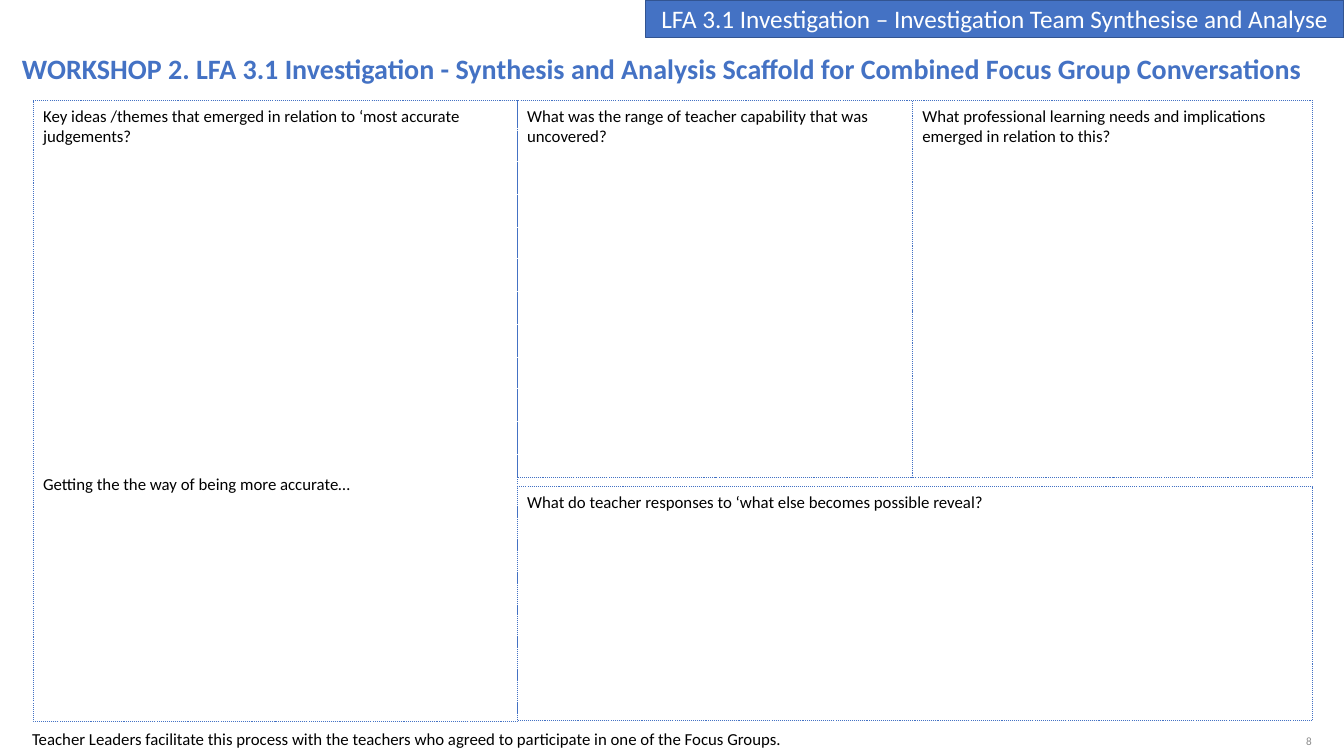
from dataclasses import dataclass

from pptx import Presentation
from pptx.dml.color import RGBColor
from pptx.enum.dml import MSO_LINE
from pptx.enum.shapes import MSO_SHAPE
from pptx.enum.text import MSO_ANCHOR, MSO_AUTO_SIZE, PP_ALIGN
from pptx.util import Pt

# Content
TITLE = ("WORKSHOP 2. LFA 3.1 Investigation - Synthesis and Analysis "
         "Scaffold for Combined Focus Group Conversations")
BANNER = "LFA 3.1 Investigation – Investigation Team Synthesise and Analyse"
THEMES = ["Key ideas /themes that emerged in relation to ‘most accurate judgements?",
          "Getting the the way of being more accurate…"]
RANGE = ["What was the range of teacher capability that was uncovered?"]
NEEDS = ["What professional learning needs and implications emerged in relation to this?"]
REVEAL = ["What do teacher responses to ‘what else becomes possible reveal?"]
NOTE = ("Teacher Leaders facilitate this process with the teachers who agreed "
        "to participate in one of the Focus Groups.")
NUMBER = "8"


@dataclass(frozen=True)
class Theme:
    font: str = "Calibri"
    blue: str = "4472C4"
    edge: str = "325491"
    ink: str = "000000"
    grey: str = "8C8C8C"
    white: str = "FFFFFF"
    head: int = 20
    bar: int = 18
    body: int = 12
    small: int = 8
    gap: int = 234


LOOK = Theme()
PX = 9144  # 100 px to the inch
WIDE, HIGH = 1333, 750

# Grid of the scaffold: column edges and row edges
LEFT, MID, SPLIT, RIGHT = 33, 513, 905, 1302
TOP, BREAK, LOWER, BASE = 100, 474, 483, 715
PANELS = [
    (THEMES, LEFT, TOP, MID, BASE + 1),
    (RANGE, MID, TOP, SPLIT, BREAK),
    (NEEDS, SPLIT, TOP, RIGHT, BREAK),
    (REVEAL, MID, LOWER, RIGHT, BASE),
]


def color(code):
    return RGBColor.from_string(code)


def emu(*lengths):
    return [n * PX for n in lengths]


def write(shape, lines, size, ink, align=PP_ALIGN.LEFT, anchor=MSO_ANCHOR.TOP, bold=False):
    frame = shape.text_frame
    frame.word_wrap = True
    frame.auto_size = MSO_AUTO_SIZE.NONE
    frame.vertical_anchor = anchor
    frame.text = "\n".join(lines)
    for i, para in enumerate(frame.paragraphs):
        para.alignment = align
        para.space_before = Pt(LOOK.gap if i else 0)
        font = para.font
        font.name, font.size, font.bold = LOOK.font, Pt(size), bold
        font.color.rgb = color(ink)


def box(slide, x, y, w, h, line, weight):
    shape = slide.shapes.add_shape(MSO_SHAPE.RECTANGLE, *emu(x, y, w, h))
    shape.shadow.inherit = False
    shape.fill.background()
    shape.line.color.rgb = color(line)
    shape.line.width = Pt(weight)
    return shape


def label(slide, x, y, w, h):
    return slide.shapes.add_textbox(*emu(x, y, w, h))


def main():
    deck = Presentation()
    deck.slide_width, deck.slide_height = emu(WIDE, HIGH)
    slide = deck.slides.add_slide(deck.slide_layouts[5])

    # Title
    title = slide.shapes.title
    title.left, title.top, title.width, title.height = emu(2, 46, 1309, 44)
    write(title, [TITLE], LOOK.head, LOOK.blue, PP_ALIGN.CENTER, bold=True)

    # Page number
    write(label(slide, 1011, 715, 300, 40), [NUMBER], LOOK.small, LOOK.grey,
          PP_ALIGN.RIGHT, MSO_ANCHOR.MIDDLE)

    # Scaffold panels
    for lines, x, y, right, base in PANELS:
        panel = box(slide, x, y, right - x, base - y, LOOK.blue, 0.75)
        panel.line.dash_style = MSO_LINE.ROUND_DOT
        write(panel, lines, LOOK.body, LOOK.ink)

    # Note below the panels
    write(label(slide, 22, 718, 1226, 30), [NOTE], LOOK.body, LOOK.ink)

    # Banner in the top corner
    banner = box(slide, 640, 0, WIDE - 640, 37, LOOK.edge, 1)
    banner.fill.solid()
    banner.fill.fore_color.rgb = color(LOOK.blue)
    write(banner, [BANNER], LOOK.bar, LOOK.white, PP_ALIGN.CENTER, MSO_ANCHOR.MIDDLE)

    deck.save("out.pptx")


if __name__ == "__main__":
    main()
